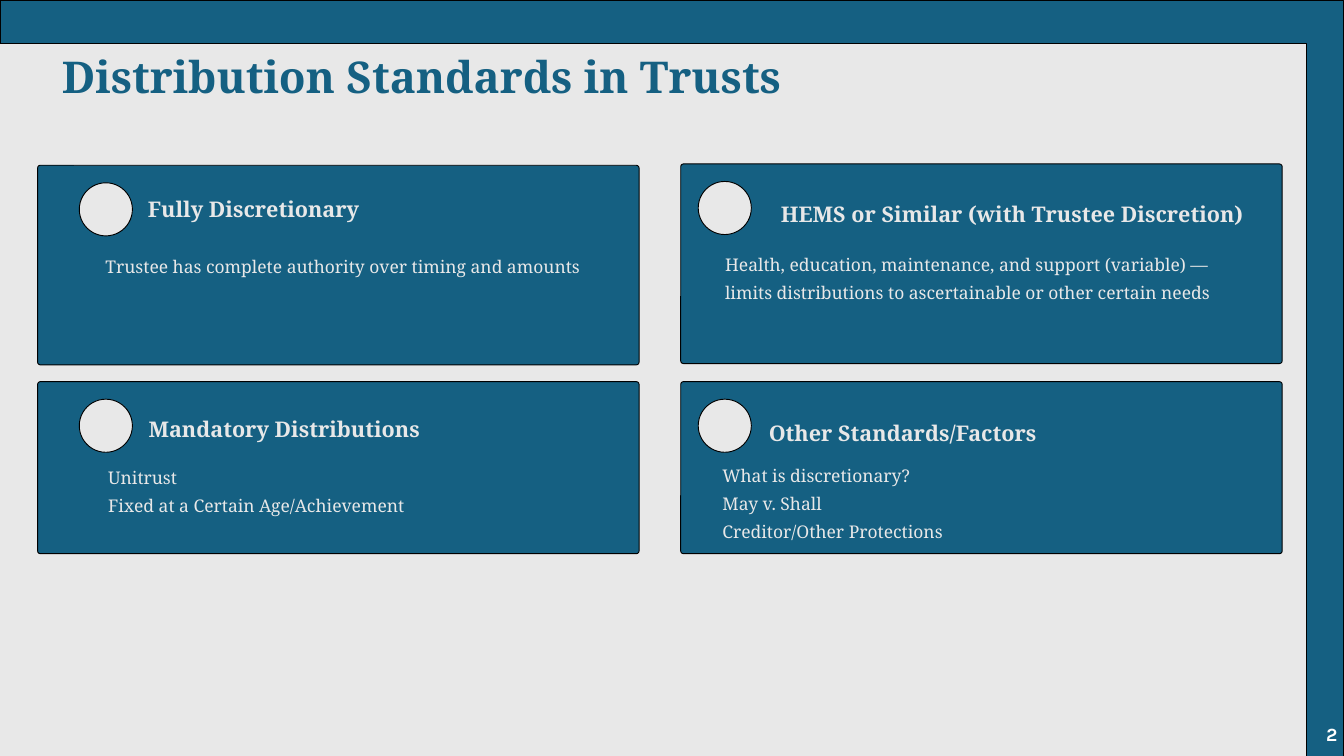
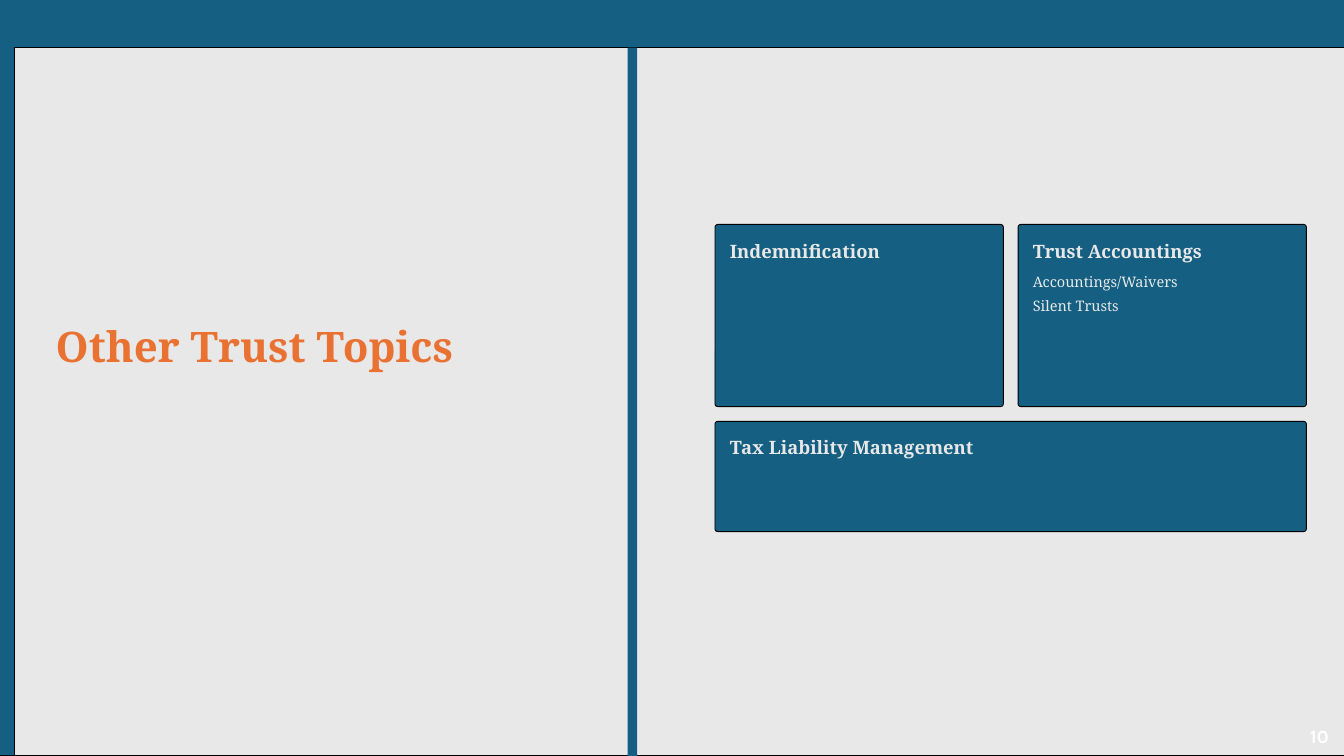
"""Builds two slides on trust distribution standards and other trust topics."""
from pptx import Presentation
from pptx.dml.color import RGBColor
from pptx.enum.shapes import MSO_SHAPE
from pptx.enum.text import MSO_ANCHOR, MSO_AUTO_SIZE, PP_ALIGN
from pptx.util import Inches, Pt

BLUE = RGBColor(0x15, 0x60, 0x82)
GREY = RGBColor(0xE8, 0xE8, 0xE8)
ORANGE = RGBColor(0xE9, 0x71, 0x32)
WHITE = RGBColor(0xFF, 0xFF, 0xFF)
BLACK = RGBColor(0x00, 0x00, 0x00)
SERIF, SANS = "Noto Serif", "Karla"
WIDTH, HEIGHT = 20, 11.25
CORNER = 0.04

# Each standard: column, row, lift, heading, heading offset and width, lines, lines offset
STANDARDS = [
    (0, 0, 0, "Fully Discretionary", (1.64, 0.43), 3.27,
     ["Trustee has complete authority over timing and amounts"], (1.01, 1.25)),
    (1, 0, 0.02, "HEMS or Similar (with Trustee Discretion)", (1.49, 0.52), 7.2,
     ["Health, education, maintenance, and support (variable) —",
      "limits distributions to ascertainable or other certain needs"], (0.66, 1.23)),
    (0, 1, 0, "Mandatory Distributions", (1.65, 0.48), 5.01,
     ["Unitrust", "Fixed at a Certain Age/Achievement"], (1.05, 1.17)),
    (1, 1, 0, "Other Standards/Factors", (1.31, 0.54), 4.74,
     ["What is discretionary?", "May v. Shall", "Creditor/Other Protections"], (0.62, 1.13)),
]
STANDARD_LEFTS, STANDARD_WIDTH = (0.56, 10.13), 8.95
STANDARD_ROWS = ((2.46, 2.97), (5.68, 2.56))
DOT, DOT_INSETS, DOT_DROP = 0.79, (0.62, 0.26), 0.26

# Each topic: column, row, columns spanned, heading, heading width, lines
TOPICS = [
    (0, 0, 1, "Indemnification", 2.79, []),
    (1, 0, 1, "Trust Accountings", 2.79, ["Accountings/Waivers", "Silent Trusts"]),
    (0, 1, 2, "Tax Liability Management", 3.68, []),
]
TOPIC_LEFT, TOPIC_TOP, TOPIC_WIDTH, TOPIC_GAP = 10.64, 3.34, 4.29, 0.22
TOPIC_HEIGHTS = (2.71, 1.64)


def add_block(slide, kind, left, top, width, height, fill, outlined=True):
    block = slide.shapes.add_shape(
        kind, Inches(left), Inches(top), Inches(width), Inches(height))
    block.shadow.inherit = False
    block.fill.solid()
    block.fill.fore_color.rgb = fill
    if outlined:
        block.line.color.rgb = BLACK
        block.line.width = Pt(1)
    else:
        block.line.fill.background()
    return block


def add_card(slide, left, top, width, height):
    card = add_block(slide, MSO_SHAPE.ROUNDED_RECTANGLE, left, top, width, height, BLUE)
    card.adjustments[0] = CORNER / min(width, height)


def add_run(paragraph, words, size, color, bold, font):
    run = paragraph.add_run()
    run.text = words
    run.font.size = Pt(size)
    run.font.name = font
    run.font.bold = bold
    run.font.color.rgb = color


def add_lines(slide, left, top, width, lines, size, spacing, color=GREY, bold=False):
    box = slide.shapes.add_textbox(
        Inches(left), Inches(top), Inches(width), Inches(len(lines) * spacing / 72))
    frame = box.text_frame
    frame.word_wrap = True
    frame.auto_size = MSO_AUTO_SIZE.SHAPE_TO_FIT_TEXT
    frame.margin_left = frame.margin_right = frame.margin_top = frame.margin_bottom = 0
    for index, line in enumerate(lines):
        paragraph = frame.paragraphs[0] if index == 0 else frame.add_paragraph()
        paragraph.line_spacing = Pt(spacing)
        add_run(paragraph, line, size, color, bold, SERIF)


def add_page_number(slide, number, right, top, size):
    box = slide.shapes.add_textbox(
        Inches(right - 4.5), Inches(top), Inches(4.5), Inches(0.6))
    frame = box.text_frame
    frame.word_wrap = True
    frame.vertical_anchor = MSO_ANCHOR.MIDDLE
    paragraph = frame.paragraphs[0]
    paragraph.alignment = PP_ALIGN.RIGHT
    add_run(paragraph, number, size, WHITE, True, SANS)


def start_slide(deck, background, frame, panel):
    slide = deck.slides.add_slide(deck.slide_layouts[6])
    slide.background.fill.solid()
    slide.background.fill.fore_color.rgb = background
    add_block(slide, MSO_SHAPE.RECTANGLE, *frame, BLUE)
    add_block(slide, MSO_SHAPE.RECTANGLE, *panel, GREY)
    return slide


def build_standards(deck):
    slide = start_slide(deck, BLUE, (0, 0, WIDTH, HEIGHT), (-0.56, 0.64, WIDTH, HEIGHT))
    add_lines(slide, 0.92, 0.7, 10.74, ["Distribution Standards in Trusts"],
              46.9, 58.7, BLUE, True)
    for column, row, lift, heading, heading_at, heading_width, lines, lines_at in STANDARDS:
        left = STANDARD_LEFTS[column]
        top, height = STANDARD_ROWS[row]
        top -= lift
        add_card(slide, left, top, STANDARD_WIDTH, height)
        add_block(slide, MSO_SHAPE.OVAL, left + DOT_INSETS[column], top + DOT_DROP,
                  DOT, DOT, GREY)
        add_lines(slide, left + heading_at[0], top + heading_at[1], heading_width,
                  [heading], 23.1, 29.4, bold=True)
        add_lines(slide, left + lines_at[0], top + lines_at[1], 8.43, lines, 18.7, 30)
    add_page_number(slide, "2", WIDTH, 10.62, 20)


def build_topics(deck):
    slide = start_slide(deck, WHITE, (-0.43, -0.85, 20.63, 12.1), (0.21, 0.71, WIDTH, 10.54))
    add_block(slide, MSO_SHAPE.RECTANGLE, 9.34, 0.71, 0.14, 10.54, BLUE, outlined=False)
    for column, row, span, heading, heading_width, lines in TOPICS:
        left = TOPIC_LEFT + column * (TOPIC_WIDTH + TOPIC_GAP)
        top = TOPIC_TOP + row * (TOPIC_HEIGHTS[0] + TOPIC_GAP)
        width = span * TOPIC_WIDTH + (span - 1) * TOPIC_GAP
        add_card(slide, left, top, width, TOPIC_HEIGHTS[row])
        add_lines(slide, left + TOPIC_GAP, top + 0.21, heading_width,
                  [heading], 19.7, 24.9, bold=True)
        if lines:
            add_lines(slide, left + TOPIC_GAP, top + 0.63, 3.84, lines, 15.5, 25.4)
    add_lines(slide, 0.83, 4.77, 7.47, ["Other Trust Topics"], 45, 54, ORANGE, True)
    add_page_number(slide, "10", 19.87, 10.65, 20)


def main():
    deck = Presentation()
    deck.slide_width, deck.slide_height = Inches(WIDTH), Inches(HEIGHT)
    build_standards(deck)
    build_topics(deck)
    deck.save("out.pptx")


if __name__ == "__main__":
    main()
